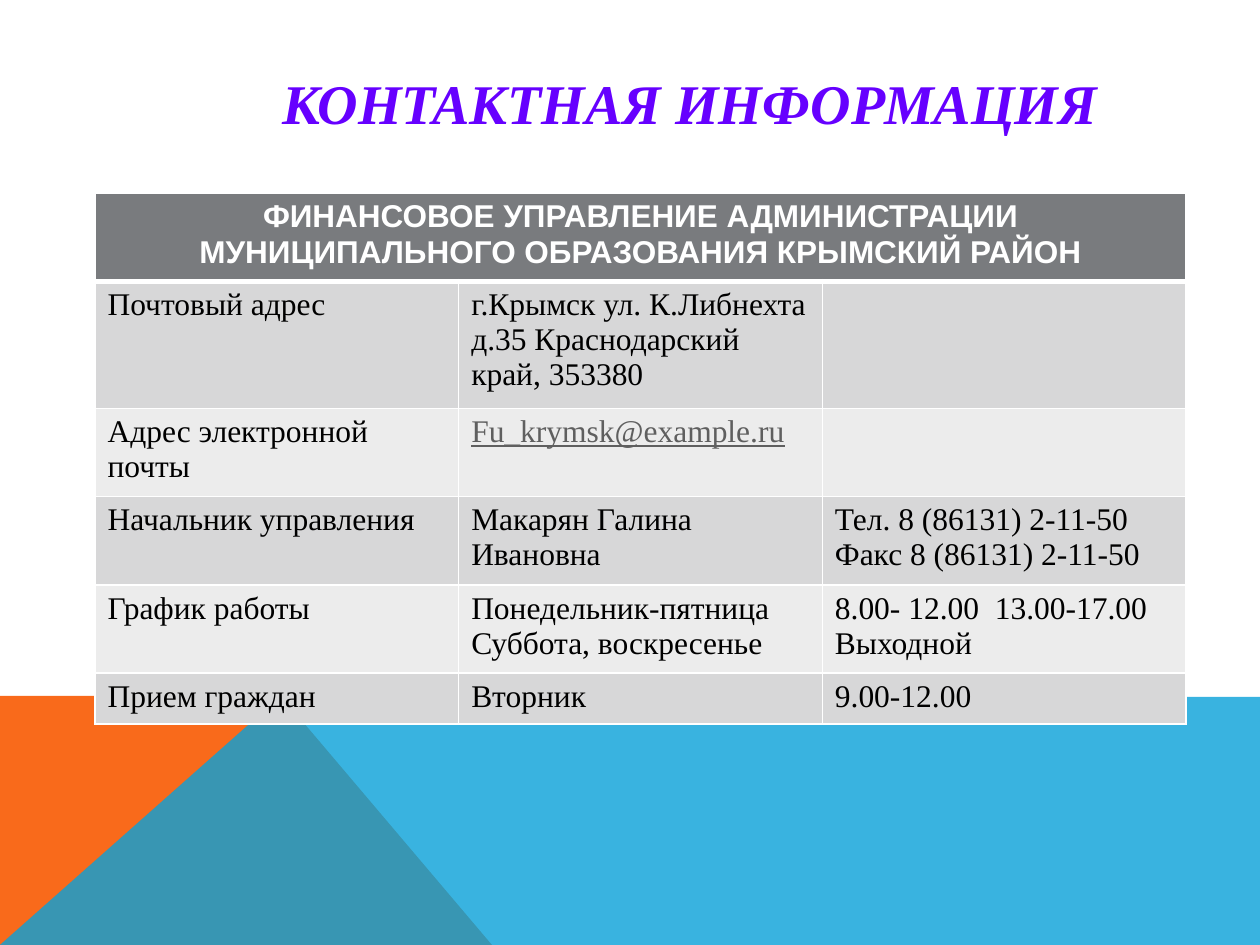
from dataclasses import dataclass

from lxml.etree import SubElement
from pptx import Presentation
from pptx.dml.color import RGBColor
from pptx.enum.text import PP_ALIGN
from pptx.oxml.ns import qn
from pptx.util import Pt

UNIT = 914400 / 126


@dataclass(frozen=True)
class Theme:
    title: str = "6600FF"
    head: str = "797B7E"
    bands: tuple = ("D7D7D8", "ECECEC")
    white: str = "FFFFFF"
    ink: str = "000000"
    link: str = "5F5F5F"
    orange: str = "F96A1B"
    blue: str = "08A1D9"
    serif: str = "Times New Roman"
    sans: str = "Arial"
    big: int = 32
    body: int = 18


THEME = Theme()
HEAD = "ФИНАНСОВОЕ УПРАВЛЕНИЕ АДМИНИСТРАЦИИ МУНИЦИПАЛЬНОГО ОБРАЗОВАНИЯ КРЫМСКИЙ РАЙОН"
MAIL = "Fu_krymsk@example.ru"
ROWS = [
    ("Почтовый адрес", "г.Крымск ул. К.Либнехта д.35 Краснодарский край, 353380", ""),
    ("Адрес электронной почты", MAIL, ""),
    ("Начальник управления", "Макарян Галина Ивановна",
     "Тел. 8 (86131) 2-11-50\nФакс 8 (86131) 2-11-50"),
    ("График работы", "Понедельник-пятница\nСуббота, воскресенье",
     "8.00- 12.00  13.00-17.00\nВыходной"),
    ("Прием граждан", "Вторник", "9.00-12.00"),
]
HEIGHTS = [87, 127, 88, 88, 88, 51]

TITLE = dict(name=THEME.serif, size=Pt(THEME.big), bold=True, italic=True)
TOP = dict(name=THEME.sans, size=Pt(THEME.body), bold=True)
BODY = dict(name=THEME.serif, size=Pt(THEME.body), bold=False)


def px(n):
    return round(n * UNIT)


def rgb(code):
    return RGBColor.from_string(code)


def write(frame, text, style, color, align=PP_ALIGN.LEFT):
    """Fill a text frame, one paragraph per line of text."""
    for i, line in enumerate(text.split("\n")):
        para = frame.add_paragraph() if i else frame.paragraphs[0]
        para.alignment = align
        run = para.add_run()
        run.text = line
        for key, value in style.items():
            setattr(run.font, key, value)
        run.font.color.rgb = rgb(color)


def shade(slide, points, color, alpha=None):
    """Draw a flat polygon; alpha is its opacity in percent."""
    pen = slide.shapes.build_freeform(*points[0], scale=UNIT)
    pen.add_line_segments(points[1:], close=True)
    shape = pen.convert_to_shape()
    shape.shadow.inherit = False
    shape.line.fill.background()
    shape.fill.solid()
    shape.fill.fore_color.rgb = rgb(color)
    if alpha:
        tint = shape.fill._xPr.find(".//" + qn("a:srgbClr"))
        SubElement(tint, qn("a:alpha"), val=str(alpha * 1000))


def add_base(slide, x, y, w, h):
    """Two overlapping bands that share a peak along the foot."""
    peak, foot = x + 281, x + 492
    low = y + h
    shade(slide, [(x, low), (x, y), (peak, y), (foot, low)], THEME.orange)
    shade(slide, [(x, low), (peak, y), (x + w, y + 1), (x + w, low)], THEME.blue, 80)


def add_title(slide, x, y, w, h):
    frame = slide.shapes.add_textbox(px(x), px(y), px(w), px(h)).text_frame
    frame.word_wrap = True
    frame.margin_top = px(13)
    write(frame, "КОНТАКТНАЯ ИНФОРМАЦИЯ", TITLE, THEME.title, PP_ALIGN.CENTER)


def paint(cell, color, base=1):
    """Set white borders, then the fill, in schema order."""
    props = cell._tc.get_or_add_tcPr()
    for side, width in dict(L=1, R=1, T=1, B=base).items():
        line = SubElement(props, qn("a:ln" + side), w=str(Pt(width)))
        fill = SubElement(line, qn("a:solidFill"))
        SubElement(fill, qn("a:srgbClr"), val=THEME.white)
    cell.fill.solid()
    cell.fill.fore_color.rgb = rgb(color)


def add_grid(slide, x, y, w, h):
    cols = len(ROWS[0])
    grid = slide.shapes.add_table(
        len(HEIGHTS), cols, px(x), px(y), px(w), px(h)).table
    for col in grid.columns:
        col.width = px(w / cols)
    for row, high in zip(grid.rows, HEIGHTS):
        row.height = px(high)
    for cell in grid.rows[0].cells:
        paint(cell, THEME.head, 3)
    top = grid.cell(0, 0)
    top.merge(grid.cell(0, cols - 1))
    write(top.text_frame, HEAD, TOP, THEME.white, PP_ALIGN.CENTER)
    for r, texts in enumerate(ROWS):
        for c, text in enumerate(texts):
            cell = grid.cell(r + 1, c)
            paint(cell, THEME.bands[r % 2], 1)
            mail = text == MAIL
            if text:
                write(cell.text_frame, text, {**BODY, "underline": mail},
                      THEME.link if mail else THEME.ink)


def main():
    deck = Presentation()
    deck.slide_width, deck.slide_height = px(1260), px(945)
    slide = deck.slides.add_slide(deck.slide_layouts[6])
    add_base(slide, 0, 696, 1260, 249)
    add_title(slide, 237, 55, 906, 118)
    add_grid(slide, 95, 193, 1091, sum(HEIGHTS))
    deck.save("out.pptx")


if __name__ == "__main__":
    main()
